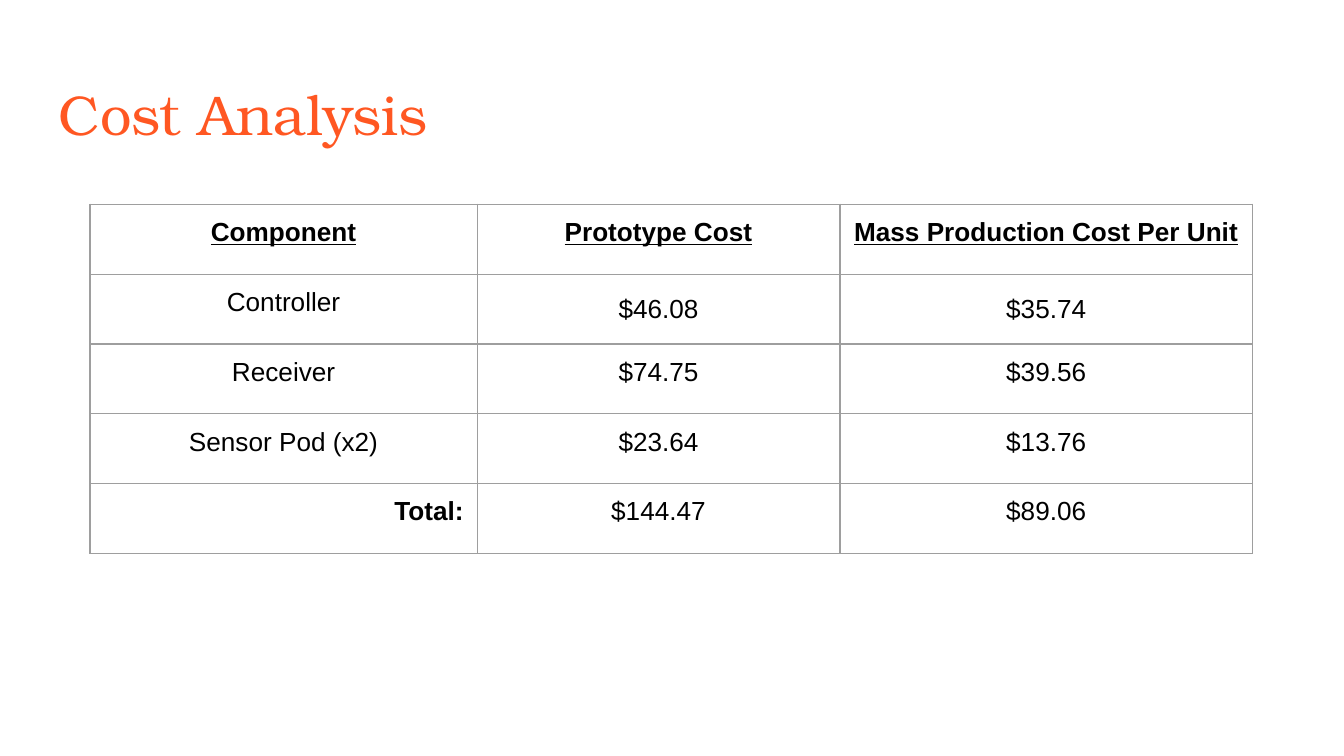
from lxml import etree
from pptx import Presentation
from pptx.dml.color import RGBColor
from pptx.enum.text import MSO_ANCHOR, PP_ALIGN
from pptx.oxml.ns import qn
from pptx.util import Inches, Pt

CENTER, RIGHT = PP_ALIGN.CENTER, PP_ALIGN.RIGHT
TOP, MIDDLE = MSO_ANCHOR.TOP, MSO_ANCHOR.MIDDLE
COLORS = {"title": "FF5722", "text": "000000", "border": "9E9E9E"}
ROWS = [
    ("Component", "Prototype Cost", "Mass Production Cost Per Unit"),
    ("Controller", "$46.08", "$35.74"),
    ("Receiver", "$74.75", "$39.56"),
    ("Sensor Pod (x2)", "$23.64", "$13.76"),
    ("Total:", "$144.47", "$89.06"),
]
COL_WIDTHS = [2.88, 2.7, 3.07]
ROW_HEIGHT = 0.52
INSET = Inches(0.1)


def style_run(r, font, size, color):
    r.font.name = font
    r.font.size = Pt(size)
    r.font.color.rgb = RGBColor.from_string(COLORS[color])


def add_borders(cell):
    """Draw all four cell edges; must run before the cell's fill is set."""
    tcPr = cell._tc.get_or_add_tcPr()
    for edge in ("a:lnL", "a:lnR", "a:lnT", "a:lnB"):
        ln = etree.SubElement(tcPr, qn(edge), w=str(Pt(0.75)))
        fill = etree.SubElement(ln, qn("a:solidFill"))
        etree.SubElement(fill, qn("a:srgbClr"), val=COLORS["border"])


prs = Presentation()
prs.slide_width = Inches(10)
prs.slide_height = Inches(10 * 9 / 16)
s = prs.slides.add_slide(prs.slide_layouts[6])

# Title
sp = s.shapes.add_textbox(Inches(0.34), Inches(0.49), Inches(9.32), Inches(0.63))
tf = sp.text_frame
tf.word_wrap = True
tf.vertical_anchor = TOP
tf.margin_left = tf.margin_right = tf.margin_top = tf.margin_bottom = INSET
tf.text = "Cost Analysis"
style_run(tf.paragraphs[0].runs[0], "TeX Gyre Bonum", 30, "title")

# Cost table
table = s.shapes.add_table(
    len(ROWS), len(COL_WIDTHS), Inches(0.67), Inches(1.52),
    Inches(sum(COL_WIDTHS)), Inches(ROW_HEIGHT * len(ROWS))).table
table.first_row = table.horz_banding = False
for col, width in zip(table.columns, COL_WIDTHS):
    col.width = Inches(width)

for i, row in enumerate(ROWS):
    table.rows[i].height = Inches(ROW_HEIGHT)
    for j, text in enumerate(row):
        is_header, is_total = i == 0, text == "Total:"
        cell = table.cell(i, j)
        add_borders(cell)
        cell.fill.background()
        cell.margin_left = cell.margin_right = INSET
        cell.margin_top = cell.margin_bottom = INSET
        cell.vertical_anchor = MIDDLE if i == 1 and j > 0 else TOP
        p = cell.text_frame.paragraphs[0]
        p.text = text
        p.alignment = RIGHT if is_total else CENTER
        r = p.runs[0]
        style_run(r, "Arial", 14, "text")
        r.font.bold = is_header or is_total
        r.font.underline = is_header

prs.save("out.pptx")
